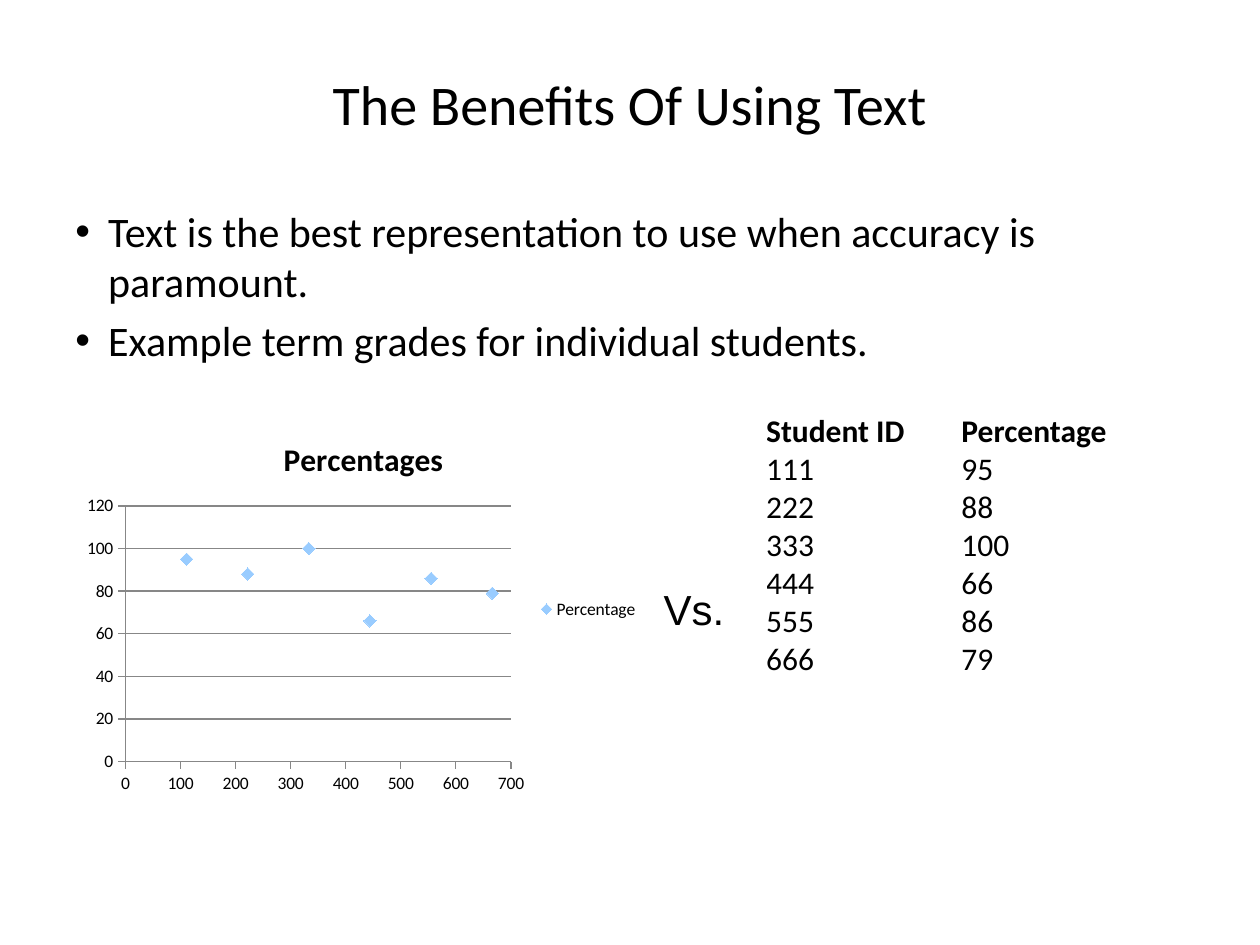
from dataclasses import dataclass

from lxml import etree
from pptx import Presentation
from pptx.chart.data import XyChartData
from pptx.dml.color import RGBColor
from pptx.enum.chart import XL_CHART_TYPE, XL_LEGEND_POSITION, XL_MARKER_STYLE, XL_TICK_MARK
from pptx.enum.text import MSO_ANCHOR, PP_ALIGN
from pptx.oxml.ns import qn
from pptx.util import Pt

SCATTER = XL_CHART_TYPE.XY_SCATTER
RIGHT = XL_LEGEND_POSITION.RIGHT
DIAMOND = XL_MARKER_STYLE.DIAMOND
OUT, NONE = XL_TICK_MARK.OUTSIDE, XL_TICK_MARK.NONE
TOP, MIDDLE, BOTTOM = MSO_ANCHOR.TOP, MSO_ANCHOR.MIDDLE, MSO_ANCHOR.BOTTOM
LEFT, CENTER = PP_ALIGN.LEFT, PP_ALIGN.CENTER


@dataclass(frozen=True)
class Theme:
    ink: RGBColor = RGBColor(0x00, 0x00, 0x00)
    grid: RGBColor = RGBColor(0x87, 0x87, 0x87)
    mark: RGBColor = RGBColor(0x99, 0xCC, 0xFF)
    main: str = "Calibri"
    plain: str = "Arial"
    title: int = 32
    body: int = 24
    cell: int = 18
    label: int = 10


class Deck:
    def __init__(self, theme):
        self.theme = theme
        self.file = Presentation()
        self.file.slide_width, self.file.slide_height = Pt(720), Pt(540)
        self.slide = self.file.slides.add_slide(self.file.slide_layouts[6])

    def style(self, font, size, bold=False, face=None):
        font.name = face or self.theme.main
        font.size = Pt(size)
        font.bold = bold
        font.color.rgb = self.theme.ink

    def add_run(self, para, text, size, bold=False, face=None):
        run = para.add_run()
        run.text = text
        self.style(run.font, size, bold, face)

    def text(self, box, lines, size, anchor=TOP, align=LEFT, face=None, bullet=False):
        frame = self.slide.shapes.add_textbox(*map(Pt, box)).text_frame
        frame.word_wrap = True
        frame.vertical_anchor = anchor
        for i, line in enumerate(lines):
            para = frame.add_paragraph() if i else frame.paragraphs[0]
            para.alignment = align
            self.add_run(para, line, size, face=face)
            if bullet:
                self.bullet(para, size)

    def bullet(self, para, size):
        para.space_before = Pt(size * 0.2)
        props = para._p.get_or_add_pPr()
        indent = Pt(18.75)
        props.set("marL", str(indent))
        props.set("indent", str(-indent))
        etree.SubElement(props, qn("a:buFont")).set("typeface", self.theme.plain)
        etree.SubElement(props, qn("a:buChar")).set("char", "•")

    def table(self, box, rows, widths, heights):
        shape = self.slide.shapes.add_table(len(rows), len(widths), *map(Pt, box))
        table = shape.table
        table.first_row = table.horz_banding = False
        for col, width in zip(table.columns, widths):
            col.width = Pt(width)
        for r, (row, height) in enumerate(zip(rows, heights)):
            table.rows[r].height = Pt(height)
            for c, value in enumerate(row):
                cell = table.cell(r, c)
                cell.fill.background()
                cell.vertical_anchor = BOTTOM
                cell.margin_left = cell.margin_right = 0
                cell.margin_top = cell.margin_bottom = 0
                para = cell.text_frame.paragraphs[0]
                self.add_run(para, str(value), self.theme.cell, bold=r == 0)

    def scatter(self, box, title, name, points):
        data = XyChartData()
        entry = data.add_series(name)
        for x, y in points:
            entry.add_data_point(x, y)
        chart = self.slide.shapes.add_chart(SCATTER, *map(Pt, box), data).chart
        self.style(chart.font, self.theme.label)
        chart.has_title = True
        para = chart.chart_title.text_frame.paragraphs[0]
        self.add_run(para, title, self.theme.cell, bold=True)
        chart.has_legend = True
        chart.legend.position = RIGHT
        chart.legend.include_in_layout = False
        for axis in (chart.category_axis, chart.value_axis):
            axis.major_tick_mark, axis.minor_tick_mark = OUT, NONE
            self.rule(axis.format.line)
        chart.category_axis.has_major_gridlines = False
        chart.value_axis.has_major_gridlines = True
        self.rule(chart.value_axis.major_gridlines.format.line)
        series = chart.plots[0].series[0]
        series.format.line.fill.background()
        series.marker.style, series.marker.size = DIAMOND, 7
        series.marker.format.fill.solid()
        series.marker.format.fill.fore_color.rgb = self.theme.mark
        series.marker.format.line.fill.background()

    def rule(self, line):
        line.color.rgb = self.theme.grid
        line.width = Pt(0.75)


def main():
    theme = Theme()
    deck = Deck(theme)
    grades = [(111, 95), (222, 88), (333, 100), (444, 66), (555, 86), (666, 79)]
    deck.text((36, 21.6, 648, 74.2), ["The Benefits Of Using Text"],
              theme.title, MIDDLE, CENTER)
    deck.text((36, 113.8, 648, 396), [
        "Text is the best representation to use when accuracy is paramount.",
        "Example term grades for individual students.",
    ], theme.body, bullet=True)
    deck.table((437.8, 210.2, 213.8, 177.1), [("Student ID", "Percentage"), *grades],
               (111.6, 102.2), [47.5] + [21.6] * len(grades))
    deck.scatter((43.2, 238.3, 329, 219.6), "Percentages", "Percentage", grades)
    deck.text((372.2, 329.8, 56.9, 36), ["Vs."], theme.body, face=theme.plain)
    deck.file.save("out.pptx")


if __name__ == "__main__":
    main()
